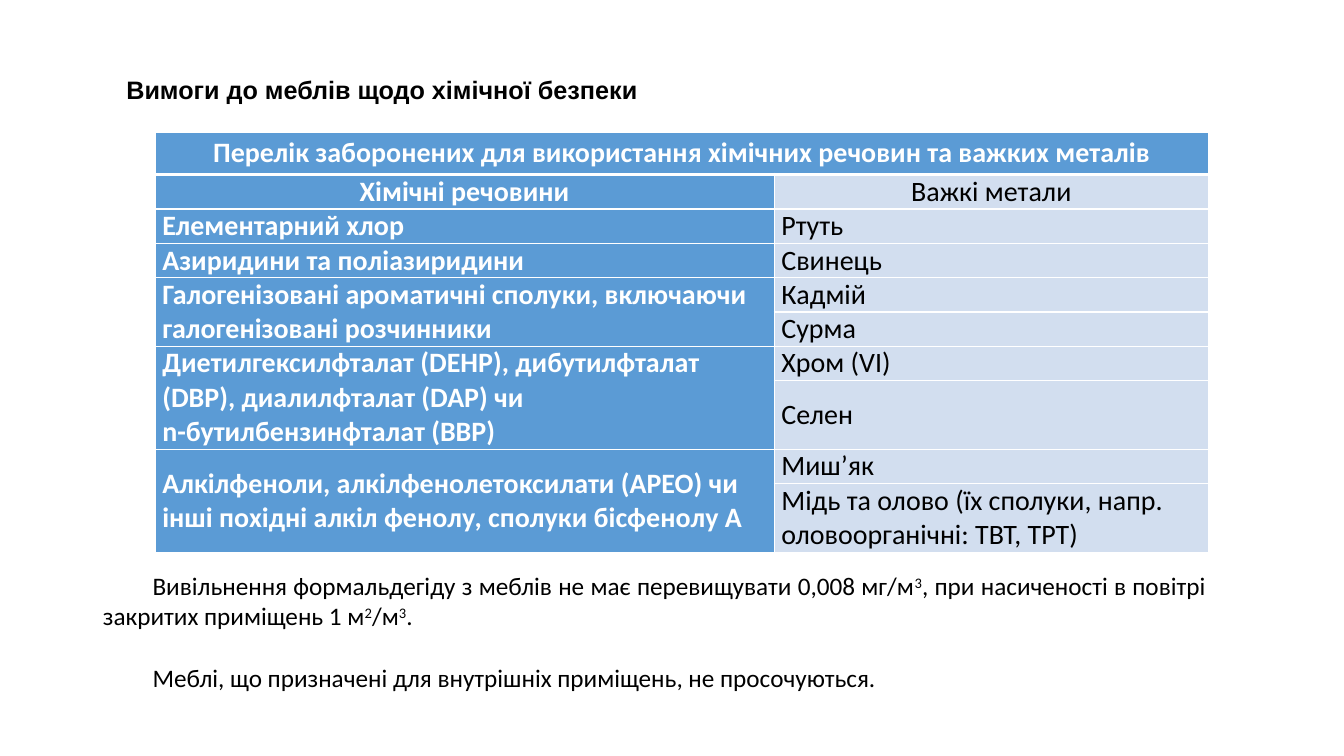
from lxml.etree import SubElement
from pptx import Presentation
from pptx.dml.color import RGBColor
from pptx.enum.text import MSO_ANCHOR, MSO_AUTO_SIZE, PP_ALIGN
from pptx.oxml import parse_xml
from pptx.oxml.ns import nsdecls, qn
from pptx.util import Cm, Pt

COLORS = {"white": "FFFFFF", "black": "000000", "blue": "5B9BD5", "pale": "D2DEEF"}

TITLE = "Вимоги до меблів щодо хімічної безпеки"
HEADER = "Перелік заборонених для використання хімічних речовин та важких металів"
ROWS = [
    ("Хімічні речовини", "Важкі метали"),
    ("Елементарний хлор", "Ртуть"),
    ("Азиридини та поліазиридини", "Свинець"),
    ("Галогенізовані ароматичні сполуки, включаючи галогенізовані розчинники", "Кадмій"),
    (None, "Сурма"),
    ("Диетилгексилфталат (DEHP), дибутилфталат (DBP), диалилфталат (DAP) чи\n"
     "n-бутилбензинфталат (BBP)", "Хром (VI)"),
    (None, "Селен"),
    ("Алкілфеноли, алкілфенолетоксилати (APEO) чи інші похідні алкіл фенолу, "
     "сполуки бісфенолу А", "Миш’як"),
    (None, "Мідь та олово (їх сполуки, напр. оловоорганічні: TBT, TPT)"),
]
ROW_HEIGHTS = [1.07] + [0.86] * 6 + [1.72, 0.86, 1.72]
NOTES = [
    [("Вивільнення формальдегіду з меблів не має перевищувати 0,008 мг/м", False),
     ("3", True),
     (", при насиченості в повітрі закритих приміщень 1 м", False),
     ("2", True), ("/м", False), ("3", True), (".", False)],
    [("Меблі, що призначені для внутрішніх приміщень, не просочуються.", False)],
]


def color(name):
    return RGBColor.from_string(COLORS[name])


def style_run(r, size, name, fill, bold=False):
    r.font.size = Pt(size)
    r.font.name = name
    r.font.bold = bold
    r.font.color.rgb = color(fill)


def place(s, left, top, width, height):
    s.left, s.top, s.width, s.height = Cm(left), Cm(top), Cm(width), Cm(height)
    tf = s.text_frame
    tf.word_wrap = True
    tf.auto_size = MSO_AUTO_SIZE.NONE
    tf.vertical_anchor = MSO_ANCHOR.TOP
    return tf


def indent_first_line(p):
    pPr = p._p.get_or_add_pPr()
    pPr.set("marL", "0")
    pPr.set("indent", str(Cm(1.25)))
    SubElement(pPr, qn("a:buNone"))
    p.alignment = PP_ALIGN.JUSTIFY
    p.space_before = Pt(0)


def fill_title(s):
    tf = place(s, 1.68, 1.75, 15, 1.02)
    tf.text = TITLE
    p = tf.paragraphs[0]
    indent_first_line(p)
    style_run(p.runs[0], 18, "Arial", "black", True)


def fill_notes(s):
    tf = place(s, 2.34, 14.25, 28.3, 3.33)
    for i, parts in enumerate(NOTES):
        p = tf.add_paragraph() if i else tf.paragraphs[0]
        indent_first_line(p)
        if i:
            p.space_before = Pt(22)
        for text, raised in parts:
            r = p.add_run()
            r.text = text
            style_run(r, 18, "Calibri", "black")
            if raised:
                r._r.get_or_add_rPr().set("baseline", "30000")


def set_borders(cell, top, bottom):
    tcPr = cell._tc.get_or_add_tcPr()
    for i, (side, width) in enumerate(zip("LRTB", (1, 1, top, bottom))):
        tcPr.insert(i, parse_xml(
            f'<a:ln{side} {nsdecls("a")} w="{Pt(width)}"><a:solidFill>'
            f'<a:srgbClr val="{COLORS["white"]}"/></a:solidFill></a:ln{side}>'))


def fill_cell(cell, text, dark, centred):
    cell.margin_left = cell.margin_right = Cm(0.18)
    cell.margin_top = cell.margin_bottom = 0
    cell.vertical_anchor = MSO_ANCHOR.MIDDLE
    cell.text_frame.text = text
    for p in cell.text_frame.paragraphs:
        p.alignment = PP_ALIGN.CENTER if centred else PP_ALIGN.LEFT
        for r in p.runs:
            style_run(r, 20, "Calibri", "white" if dark else "black", dark)


def add_substances(slide):
    frame = slide.shapes.add_table(len(ROWS) + 1, 2, Cm(3.91), Cm(3.33),
                                   Cm(26.55), Cm(sum(ROW_HEIGHTS)))
    table = frame.table
    table.horz_banding = False
    for column, width in zip(table.columns, (15.6, 10.95)):
        column.width = Cm(width)
    for row, height in zip(table.rows, ROW_HEIGHTS):
        row.height = Cm(height)
    for i, row in enumerate([(HEADER, None)] + ROWS):
        for j, text in enumerate(row):
            cell = table.cell(i, j)
            dark = j == 0 or i == 0
            cell.fill.solid()
            cell.fill.fore_color.rgb = color("blue" if dark else "pale")
            set_borders(cell, 3 if i == 1 else 1, 3 if i == 0 else 1)
            if text:
                fill_cell(cell, text, dark, i < 2)
            elif i == 0:
                table.cell(0, 0).merge(cell)
            else:
                table.cell(i - 1, j).merge(cell)


def main():
    prs = Presentation()
    prs.slide_width, prs.slide_height = Cm(33.87), Cm(19.05)
    slide = prs.slides.add_slide(prs.slide_layouts[1])
    fill_title(slide.shapes.title)
    fill_notes(slide.placeholders[1])
    add_substances(slide)
    prs.save("out.pptx")


if __name__ == "__main__":
    main()
